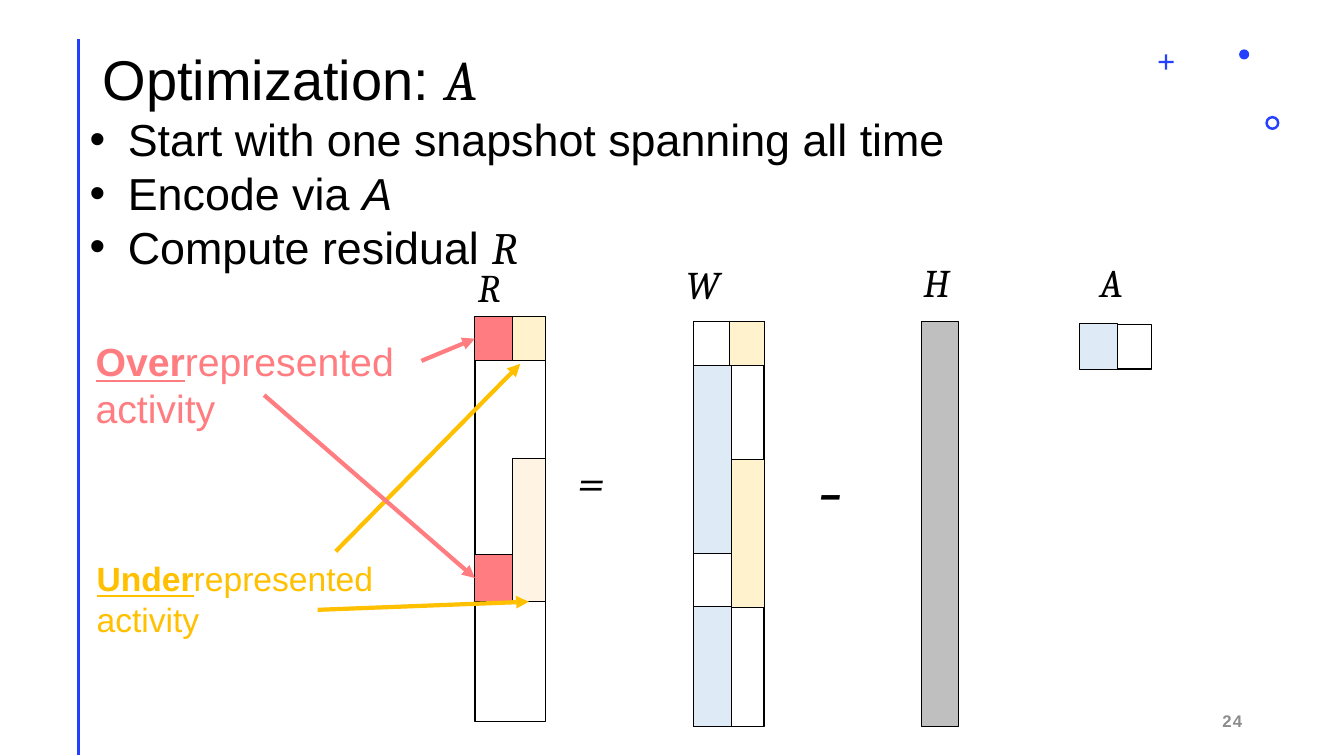
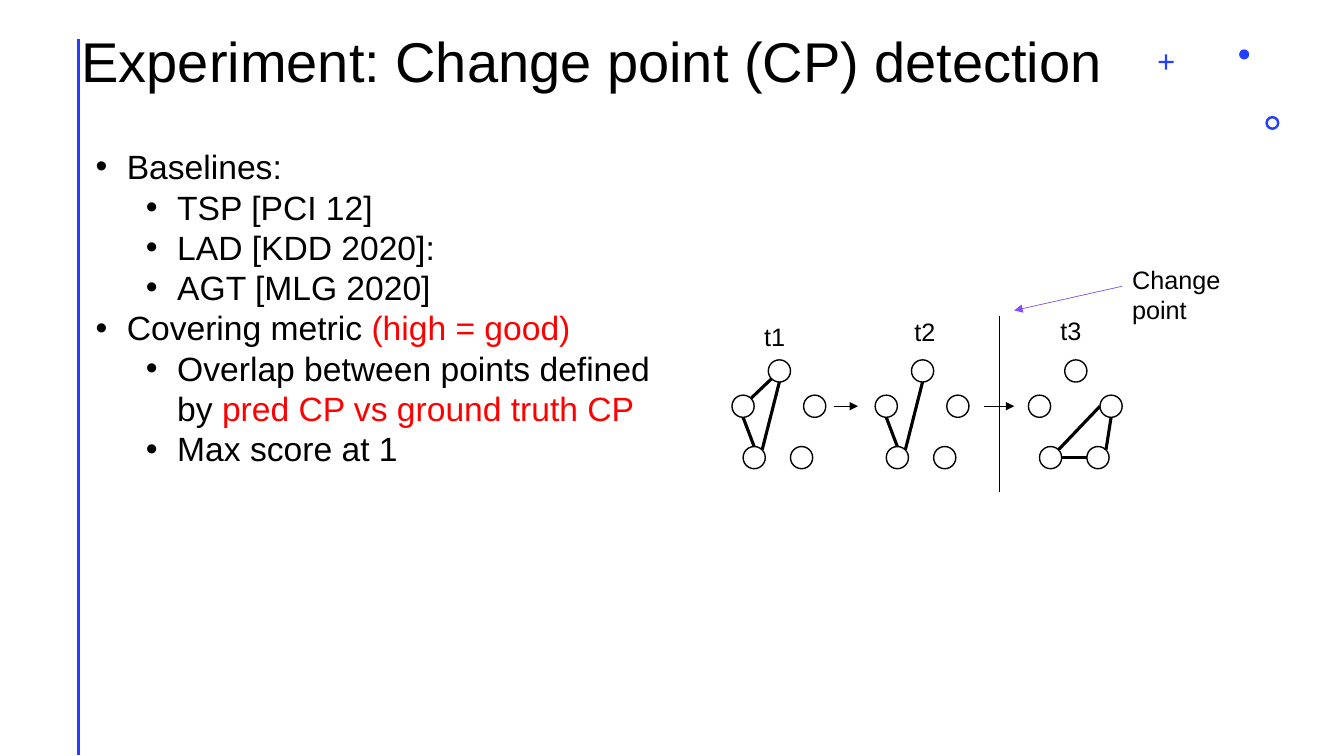
from dataclasses import dataclass

from lxml.etree import SubElement
from pptx import Presentation
from pptx.dml.color import RGBColor
from pptx.enum.shapes import MSO_CONNECTOR, MSO_SHAPE
from pptx.enum.text import MSO_ANCHOR, PP_ALIGN
from pptx.oxml.ns import qn
from pptx.util import Emu, Pt


@dataclass(frozen=True)
class Theme:
    body_font: str = "Arial"
    math_font: str = "Cambria"
    black: str = "000000"
    white: str = "FFFFFF"
    accent: str = "243FFF"
    page_number: str = "8C8C8C"
    over: str = "FF7C80"
    under: str = "FFC000"
    active: str = "FFF2CC"
    pale_active: str = "FFF4E3"
    encoded: str = "DEEBF7"
    summary: str = "BFBFBF"
    highlight: str = "FF0000"
    pointer: str = "814DFF"
    title: int = 40
    bullets: int = 32
    large: int = 28
    medium: int = 24
    small: int = 18
    tiny: int = 12
    equals: int = 36
    minus: int = 60


T = Theme()


@dataclass(frozen=True)
class Run:
    text: str
    color: str = T.black
    font: str = T.body_font
    bold: bool = False
    italic: bool = False
    underline: bool = False
    spacing: int = 0


def math(text):
    return Run(text, font=T.math_font, italic=True)


def px(n):
    """Turn px, 100 to the inch, into EMU."""
    return Emu(round(n * 9144))


def rgb(color):
    return RGBColor.from_string(color)


def add_runs(p, runs, size):
    for run in runs:
        r = p.add_run()
        r.text = run.text
        r.font.size = Pt(size)
        r.font.name = run.font
        r.font.color.rgb = rgb(run.color)
        r.font.bold = run.bold
        r.font.italic = run.italic
        r.font.underline = run.underline
        if run.spacing:
            r.font._element.set("spc", str(run.spacing))


def add_text(slide, box, size, *runs, anchor=MSO_ANCHOR.TOP, align=PP_ALIGN.LEFT):
    sp = slide.shapes.add_textbox(*map(px, box))
    tf = sp.text_frame
    tf.word_wrap = True
    tf.vertical_anchor = anchor
    p = tf.paragraphs[0]
    p.alignment = align
    add_runs(p, runs, size)
    return tf


def add_title(slide, box, *runs):
    tf = add_text(slide, box, T.title, *runs, anchor=MSO_ANCHOR.MIDDLE)
    tf.paragraphs[0].line_spacing = 0.9


def add_bullets(slide, box, size, hanging, items):
    """Each item is its level followed by its runs."""
    tf = add_text(slide, box, size)
    for i, (level, *runs) in enumerate(items):
        p = tf.add_paragraph() if i else tf.paragraphs[0]
        p.level = level
        pPr = p._p.get_or_add_pPr()
        pPr.set("marL", str(px(hanging + 50 * level)))
        pPr.set("indent", str(px(-hanging)))
        SubElement(pPr, qn("a:buFont")).set("typeface", T.body_font)
        SubElement(pPr, qn("a:buChar")).set("char", "•")
        add_runs(p, runs, size)


def add_shape(slide, kind, box, fill, line_width=0):
    sp = slide.shapes.add_shape(kind, *map(px, box))
    sp.shadow.inherit = False
    sp.fill.solid()
    sp.fill.fore_color.rgb = rgb(fill)
    if line_width:
        sp.line.color.rgb = rgb(T.black)
        sp.line.width = Pt(line_width)
    else:
        sp.line.fill.background()
    return sp


def add_line(slide, start, end, color, width, arrow=False, target=None, side=0):
    """Draw a straight line, joined to a side of target if one is given."""
    line = slide.shapes.add_connector(
        MSO_CONNECTOR.STRAIGHT, *map(px, (*start, *end)))
    line.line.color.rgb = rgb(color)
    line.line.width = Pt(width)
    if arrow:
        ln = line.line._get_or_add_ln()
        SubElement(ln, qn("a:tailEnd")).set("type", "triangle")
    SubElement(line._element.spPr, qn("a:effectLst"))
    if target is not None:
        line.end_connect(target, side)


def add_matrix(slide, box, blocks, fill=T.white):
    """Draw a framed matrix with blocks placed from its corner; return them."""
    x, y = box[:2]
    add_shape(slide, MSO_SHAPE.RECTANGLE, box, fill, 1)
    return [
        add_shape(slide, MSO_SHAPE.RECTANGLE, (x + dx, y + dy, w, h), color, 0.5)
        for dx, dy, w, h, color in blocks
    ]


NODE = 22
NODES = {"left": (0, 35), "top": (36, 0), "right": (71, 35),
         "low_left": (11, 86), "low_right": (58, 86)}
RIM = {"n": (11, 0), "ne": (19, 3), "e": (22, 11),
       "s": (11, 22), "sw": (3, 19), "w": (0, 11)}


def add_snapshot(slide, x, y, edges):
    """Draw a five-node graph; an edge is node, rim point, node, rim point."""
    def rim_point(node, point):
        return tuple(map(sum, zip((x, y), NODES[node], RIM[point])))

    for dx, dy in NODES.values():
        add_shape(slide, MSO_SHAPE.OVAL, (x + dx, y + dy, NODE, NODE), T.white, 1)
    for a, a_point, b, b_point in edges:
        add_line(slide, rim_point(a, a_point), rim_point(b, b_point), T.black, 2.25)


def new_slide(prs):
    """Add a blank slide with the rail and the corner ornaments."""
    slide = prs.slides.add_slide(prs.slide_layouts[6])
    add_line(slide, (78, 39), (78, 749), T.accent, 2)
    plus = add_shape(slide, MSO_SHAPE.CROSS, (1149, 54, 15, 15), T.accent)
    plus.adjustments[0] = 0.43
    ring = add_shape(slide, MSO_SHAPE.DONUT, (1255, 115, 14, 14), T.accent)
    ring.adjustments[0] = 0.18
    add_shape(slide, MSO_SHAPE.OVAL, (1229, 49, 10, 10), T.accent)
    return slide


def build_optimization(prs):
    slide = new_slide(prs)
    add_title(slide, (92, 9, 1150, 145), Run("Optimization: "), math("A"))
    add_bullets(slide, (79, 106, 1254, 172), T.bullets, 38, [
        (0, Run("Start with one snapshot spanning all time")),
        (0, Run("Encode via "), Run("A", italic=True)),
        (0, Run("Compute residual "), math("R")),
    ])

    add_matrix(slide, (688, 319, 70, 402), [
        (37, 137, 33, 147, T.active),
        (0, 283, 37, 119, T.encoded),
        (35, 0, 35, 44, T.active),
        (0, 44, 37, 186, T.encoded),
    ])
    add_matrix(slide, (914, 319, 37, 402), [], T.summary)
    add_matrix(slide, (1072, 322, 70, 44), [(-1, -1, 37, 45, T.encoded)])
    late_under, late_over, _, early_over = add_matrix(slide, (471, 314, 70, 402), [
        (37, 141, 33, 142, T.pale_active),
        (0, 236, 37, 47, T.over),
        (35, 0, 35, 44, T.active),
        (0, 0, 37, 44, T.over),
    ])

    for name, x, y, w in (("R", 464, 256, 52), ("W", 671, 253, 173),
                          ("H", 906, 251, 70), ("A", 1081, 251, 173)):
        add_text(slide, (x, y, w, 63), T.large, math(name))
    add_text(slide, (563, 442, 141, 78), T.equals, math("="))
    add_text(slide, (801, 427, 70, 123), T.minus, math("-"))

    for prefix, color, size, box in (
            ("Under", T.under, T.medium, (86, 549, 349, 91)),
            ("Over", T.over, T.large, (85, 330, 354, 104))):
        add_text(slide, box, size, Run(prefix, color, bold=True, underline=True),
                 Run("represented activity", color))
    for start, end, color, target, side in (
            ((315, 605), (525, 597), T.under, late_under, 2),
            ((333, 547), (516, 361), T.under, None, 0),
            ((418, 358), (471, 336), T.over, early_over, 1),
            ((262, 392), (471, 574), T.over, late_over, 1)):
        add_line(slide, start, end, color, 3, True, target, side)

    add_text(slide, (942, 695, 300, 40), T.tiny,
             Run("24", T.page_number, bold=True, spacing=100),
             anchor=MSO_ANCHOR.MIDDLE, align=PP_ALIGN.RIGHT)


def build_experiment(prs):
    slide = new_slide(prs)
    add_title(slide, (71, -9, 1124, 145),
              Run("Experiment: Change point (CP) detection"))
    add_bullets(slide, (85, 140, 594, 465), T.medium, 31, [
        (0, Run("Baselines:")),
        (1, Run("TSP [PCI 12]")),
        (1, Run("LAD [KDD 2020]:")),
        (1, Run("AGT [MLG 2020]")),
        (0, Run("Covering metric "), Run("(high = good)", T.highlight)),
        (1, Run("Overlap between points defined by "),
         Run("pred CP vs ground truth CP", T.highlight)),
        (1, Run("Max score at 1")),
    ])

    shared_edges = [("left", "s", "low_left", "n"), ("low_left", "ne", "top", "s")]
    snapshots = (
        ("t1", 748, 314, 726, [("top", "sw", "left", "ne"), *shared_edges]),
        ("t2", 897, 309, 868, shared_edges),
        ("t3", 1042, 308, 1020, [("low_right", "ne", "right", "s"),
                                 ("low_right", "w", "low_left", "e"),
                                 ("low_left", "ne", "right", "w")]),
    )
    for name, label_x, label_y, x, edges in snapshots:
        add_snapshot(slide, x, 357, edges)
        add_text(slide, (label_x, label_y, 67, 40), T.small, Run(name))
    for start, end in ((827, 851), (976, 1006)):
        add_line(slide, (start, 403), (end, 403), T.black, 0.5, True)

    add_line(slide, (991, 314), (991, 488), T.black, 0.5)
    add_line(slide, (1113, 284), (1006, 308), T.pointer, 0.5, True)
    add_text(slide, (1113, 257, 111, 71), T.small, Run("Change point"))


def main():
    prs = Presentation()
    prs.slide_width, prs.slide_height = px(1333), px(750)
    build_optimization(prs)
    build_experiment(prs)
    prs.save("out.pptx")


if __name__ == "__main__":
    main()
